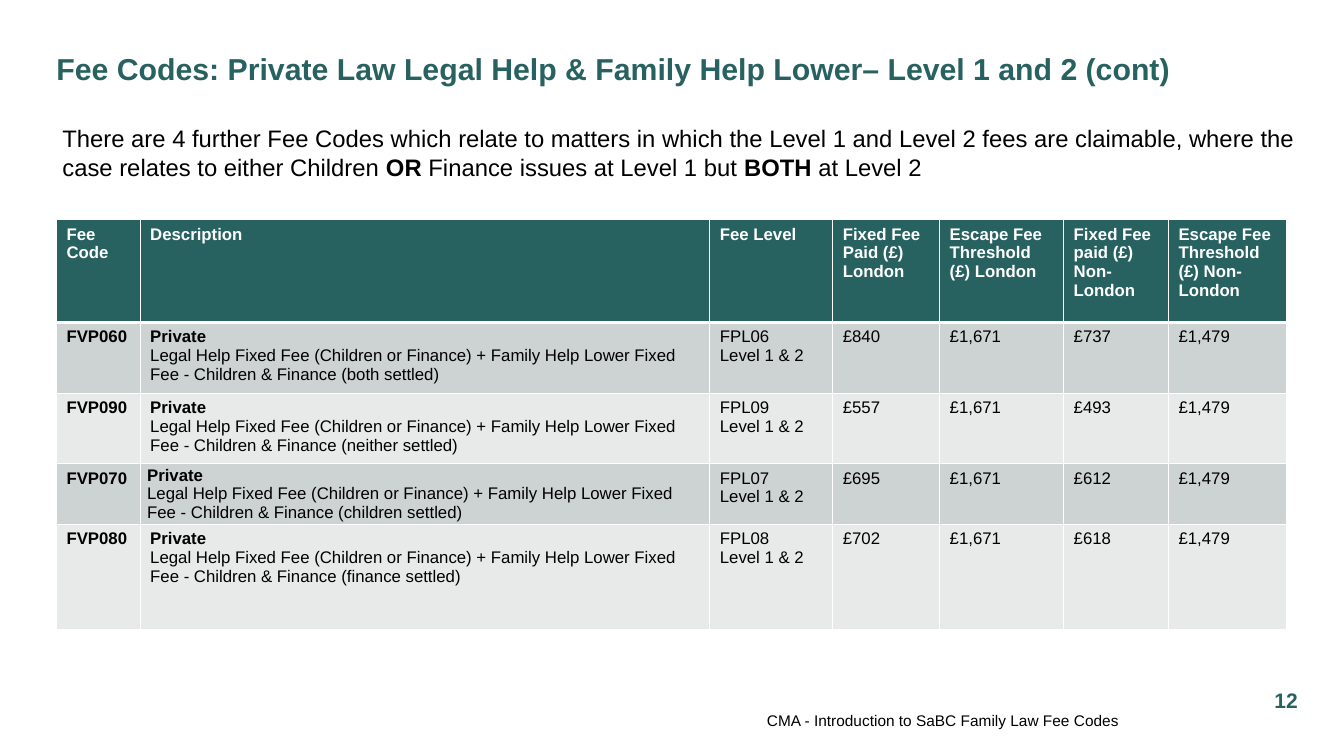
from lxml import etree
from pptx import Presentation
from pptx.dml.color import RGBColor
from pptx.enum.text import MSO_ANCHOR, PP_ALIGN
from pptx.oxml.ns import qn
from pptx.util import Inches, Pt

TEAL = RGBColor(0x27, 0x61, 0x60)
GREY = RGBColor(0xCD, 0xD2, 0xD2)
PALE = RGBColor(0xE8, 0xEA, 0xEA)
WHITE = RGBColor(0xFF, 0xFF, 0xFF)
BLACK = RGBColor(0, 0, 0)
FONT = "Arial"
MIDDLE, TOP = MSO_ANCHOR.MIDDLE, MSO_ANCHOR.TOP
LEFT, CENTER, RIGHT = PP_ALIGN.LEFT, PP_ALIGN.CENTER, PP_ALIGN.RIGHT

COLUMN_WIDTHS = [0.83, 5.65, 1.22, 1.06, 1.23, 1.04, 1.17]
ROW_HEIGHTS = [1.02, 0.66, 0.66, 0.56, 1.05]
HEADINGS = [
    "Fee Code", "Description", "Fee Level",
    "Fixed Fee Paid (£) London", "Escape Fee Threshold (£) London",
    "Fixed Fee paid (£) Non-London", "Escape Fee Threshold (£) Non-London",
]
DESCRIPTION = ("Legal Help Fixed Fee (Children or Finance) + Family Help Lower "
               "Fixed Fee - Children & Finance ({} settled)")
FEES = [
    ("06", "both", "£840", "£737"),
    ("09", "neither", "£557", "£493"),
    ("07", "children", "£695", "£612"),
    ("08", "finance", "£702", "£618"),
]
LONDON_THRESHOLD, OTHER_THRESHOLD = "£1,671", "£1,479"
TIGHT_ROW = 3


def add_run(paragraph, text, size, color, bold=False):
    """Append one formatted run to a paragraph."""
    run = paragraph.add_run()
    run.text = text
    run.font.name = FONT
    run.font.size = Pt(size)
    run.font.bold = bold
    run.font.color.rgb = color


def add_text(slide, box, runs, size, color, align=LEFT, anchor=MIDDLE,
             margins=(0, 0, 0, 0)):
    """Place a one-paragraph text box; runs are (text, bold) pairs."""
    shape = slide.shapes.add_textbox(*(Inches(length) for length in box))
    frame = shape.text_frame
    frame.word_wrap = True
    frame.vertical_anchor = anchor
    (frame.margin_left, frame.margin_top,
     frame.margin_right, frame.margin_bottom) = (Inches(m) for m in margins)
    paragraph = frame.paragraphs[0]
    paragraph.alignment = align
    for text, bold in runs:
        add_run(paragraph, text, size, color, bold)


def set_borders(cell, top, bottom):
    """Give a cell white borders, with top and bottom widths in points."""
    properties = cell._tc.get_or_add_tcPr()
    for tag, width in (("a:lnL", 1), ("a:lnR", 1), ("a:lnT", top), ("a:lnB", bottom)):
        line = etree.SubElement(properties, qn(tag), w=str(Pt(width)))
        fill = etree.SubElement(line, qn("a:solidFill"))
        etree.SubElement(fill, qn("a:srgbClr"), val=str(WHITE))


def fill_cell(cell, lines, fill, color):
    """Write (text, bold) lines into a cell, one paragraph each."""
    cell.fill.solid()
    cell.fill.fore_color.rgb = fill
    frame = cell.text_frame
    for index, (text, bold) in enumerate(lines):
        paragraph = frame.add_paragraph() if index else frame.paragraphs[0]
        add_run(paragraph, text, 12, color, bold)


def fee_row(number, settled, london_fee, other_fee):
    """Return the cell contents of one fee code row."""
    return [
        [(f"FVP{number}0", True)],
        [("Private", True), (DESCRIPTION.format(settled), False)],
        [(f"FPL{number}", False), ("Level 1 & 2", False)],
        [(london_fee, False)], [(LONDON_THRESHOLD, False)],
        [(other_fee, False)], [(OTHER_THRESHOLD, False)],
    ]


def add_fee_table(slide, left, top):
    """Build the fee code table from its top left corner."""
    rows = [[[(heading, True)] for heading in HEADINGS]]
    rows += [fee_row(*fee) for fee in FEES]
    table = slide.shapes.add_table(
        len(rows), len(HEADINGS), Inches(left), Inches(top),
        Inches(sum(COLUMN_WIDTHS)), Inches(sum(ROW_HEIGHTS))).table
    for column, width in zip(table.columns, COLUMN_WIDTHS):
        column.width = Inches(width)
    for row, height in zip(table.rows, ROW_HEIGHTS):
        row.height = Inches(height)
    for row_index, contents in enumerate(rows):
        is_header = row_index == 0
        fill = TEAL if is_header else (GREY if row_index % 2 else PALE)
        for column_index, lines in enumerate(contents):
            cell = table.cell(row_index, column_index)
            set_borders(cell, 3 if row_index == 1 else 1, 3 if is_header else 1)
            fill_cell(cell, lines, fill, WHITE if is_header else BLACK)
    tight_cell = table.cell(TIGHT_ROW, 1)
    tight_cell.vertical_anchor = MIDDLE
    tight_cell.margin_left = tight_cell.margin_right = Inches(0.07)
    tight_cell.margin_top = tight_cell.margin_bottom = 0


def add_heading(slide, left, top):
    """Place the title and the introduction below it."""
    add_text(slide, (left, top, 11.94, 0.59),
             [("Fee Codes: Private Law Legal Help & Family Help Lower– "
               "Level 1 and 2 (cont)", True)], 21.6, TEAL)
    introduction = [
        ("There are 4 further Fee Codes which relate to matters in which the "
         "Level 1 and Level 2 fees are claimable, where the case relates to "
         "either Children ", False),
        ("OR ", True),
        ("Finance issues at Level 1 but ", False),
        ("BOTH", True),
        (" at Level 2", False),
    ]
    add_text(slide, (left - 0.04, top + 0.8, 12.49, 0.67), introduction, 17, BLACK,
             anchor=TOP, margins=(0.1, 0.05, 0.1, 0.05))


def add_footer(slide, left, top):
    """Place the footer text and the slide number."""
    add_text(slide, (left, top, 7.88, 0.2),
             [("CMA - Introduction to SaBC Family Law Fee Codes", False)],
             11, BLACK, RIGHT, margins=(0, 0, 0, 0.18))
    add_text(slide, (left + 9.29, top - 0.39, 0.49, 0.4), [("12", True)],
             15, TEAL, CENTER)


def main():
    """Build and save the presentation."""
    presentation = Presentation()
    presentation.slide_width = Inches(13.33)
    presentation.slide_height = Inches(7.5)
    slide = presentation.slides.add_slide(presentation.slide_layouts[6])
    add_heading(slide, 0.56, 0.38)
    add_footer(slide, 3.22, 7.14)
    add_fee_table(slide, 0.56, 2.18)
    presentation.save("out.pptx")


if __name__ == "__main__":
    main()
